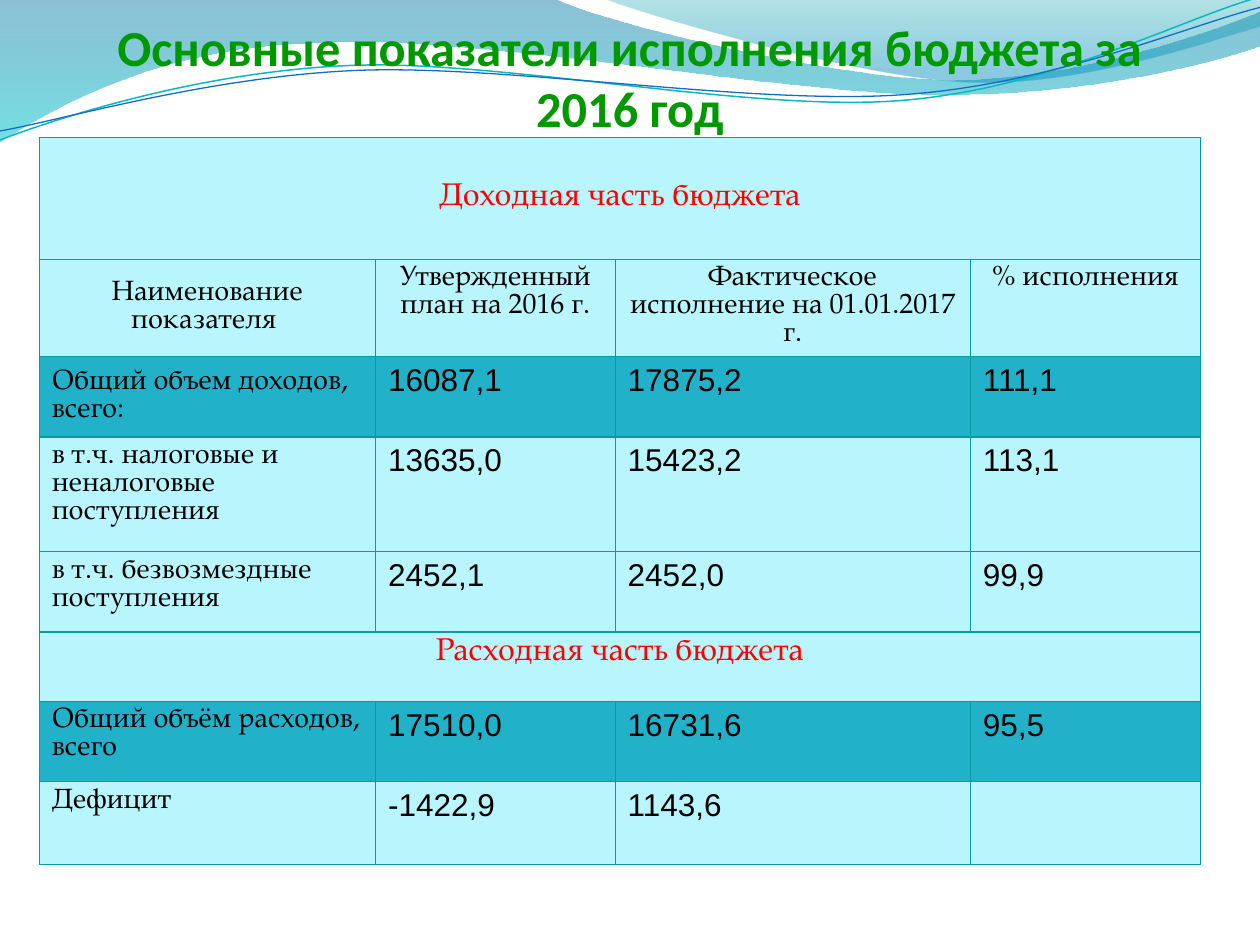
from dataclasses import dataclass
from math import cos, radians, sin

from lxml.etree import SubElement
from pptx import Presentation
from pptx.dml.color import RGBColor
from pptx.enum.text import MSO_ANCHOR as Anchor, PP_ALIGN as Align
from pptx.oxml.ns import qn
from pptx.util import Cm, Pt


@dataclass(frozen=True)
class Theme:
    """Hold the colours, fonts and type sizes of the slide."""

    title: str = "009900"
    heading: str = "FF0000"
    text: str = "000000"
    light: str = "B9F5FC"
    accent: str = "21B2C9"
    border: str = "069CA3"
    title_font: str = "Calibri"
    label_font: str = "TeX Gyre Pagella"
    number_font: str = "Arial"
    title_size: float = 28.8
    large: float = 18
    small: float = 16


THEME = Theme()
CURVE_TILT = 2.7
COLUMN_WIDTHS = (6.78, 4.83, 7.16, 4.64)
ROW_HEIGHTS = (2.46, 1.96, 1.62, 2.31, 1.62, 1.4, 1.62, 1.67)
ROWS = (
    ("Доходная часть бюджета",),
    ("Наименование показателя ", "Утвержденный план на 2016 г.",
     "Фактическое исполнение на 01.01.2017 г.", "% исполнения"),
    ("Общий объем доходов, всего:", "16087,1", "17875,2", "111,1"),
    ("в т.ч. налоговые и неналоговые поступления", "13635,0", "15423,2", "113,1"),
    ("в т.ч. безвозмездные поступления", "2452,1", "2452,0", "99,9"),
    ("Расходная часть бюджета",),
    ("Общий объём расходов, всего", "17510,0", "16731,6", "95,5"),
    ("Дефицит", "-1422,9", "1143,6", ""),
)
HEADER_ROW = 1
TOTAL_ROWS = (2, 6)
MIDDLE_CELLS = ((0, 0), (1, 0), (2, 0))

LEFT_WAVE = (
    (0, 0), (11.18, -0.03),
    (12.09, 0.43, 16.87, 1.6, 19.25, 1.6), (21.67, 1.6, 24.33, 0.66, 25.4, 0.23),
    (25.43, 0.91), (24.97, 1.12, 22.1, 1.93, 18.95, 1.91),
    (15.8, 1.91, 9.7, 0.71, 6.53, 0.86), (3.28, 0.91, 1.17, 2.11, -0.03, 2.87),
    (0, 0),
)
RIGHT_WAVE = (
    (12.17, -0.03), (12.93, 0.28, 17.32, 1.57, 19.53, 1.65),
    (21.74, 1.75, 24.41, 0.81, 25.4, 0.53), (25.4, 0), (12.17, -0.03),
)
TEAL_CURVE = (
    (0, 2.82), (1.22, 2.36, 4.01, 1.45, 7.04, 1.32),
    (10.03, 1.19, 15.06, 2.26, 18.11, 2.03), (21.16, 1.8, 23.83, 0.38, 25.35, -0.05),
)
BLUE_CURVE = (
    (0, 2.64), (1.19, 2.44, 4.17, 1.55, 7.19, 1.42),
    (10.24, 1.3, 15.16, 2.13, 18.21, 1.91), (21.23, 1.7, 23.9, 0.53, 25.4, 0.15),
)


def tilt(segments, center):
    """Turn all segment points clockwise about a center."""
    cosine, sine = cos(radians(CURVE_TILT)), sin(radians(CURVE_TILT))
    turned = []
    for segment in segments:
        values = []
        for x, y in zip(segment[::2], segment[1::2]):
            across, down = x - center[0], y - center[1]
            values += (center[0] + across * cosine - down * sine,
                       center[1] + across * sine + down * cosine)
        turned.append(tuple(values))
    return turned


def add_outline(slide, segments, close):
    """Add a shadowless freeform of straight and cubic segments."""
    points = [(Cm(x), Cm(y)) for segment in segments
              for x, y in zip(segment[::2], segment[1::2])]
    builder = slide.shapes.build_freeform(*points[0])
    builder.add_line_segments(points[1:], close=close)
    shape = builder.convert_to_shape()
    shape.shadow.inherit = False
    outline = next(shape.element.iter(qn("a:path")))
    lines = iter(outline.findall(qn("a:lnTo")))
    for segment in segments[1:]:
        line = next(lines)
        if len(segment) == 6:
            curve = SubElement(outline, qn("a:cubicBezTo"))
            outline.replace(line, curve)
            for vertex in (line, next(lines), next(lines)):
                curve.append(vertex[0])
                if vertex.getparent() is not None:
                    outline.remove(vertex)
    return shape


def add_wave(slide, segments, stops):
    """Add a wave filled with a translucent downward gradient."""
    shape = add_outline(slide, segments, True)
    shape.line.fill.background()
    shape.fill.gradient()
    shape.fill.gradient_angle = 270
    for stop, (position, color, opacity) in zip(shape.fill.gradient_stops, stops):
        stop.position = position
        stop.color.rgb = RGBColor.from_string(color)
    elements = shape.element.spPr.iter(qn("a:srgbClr"))
    for element, (position, color, opacity) in zip(elements, stops):
        SubElement(element, qn("a:alpha"), val=str(opacity * 1000))


def add_curve(slide, segments, center, color, width):
    """Add an open thin curve, rotated about its center."""
    shape = add_outline(slide, tilt(segments, center), False)
    shape.rotation = -CURVE_TILT
    shape.fill.background()
    shape.line.color.rgb = RGBColor.from_string(color)
    shape.line.width = Pt(width)


def format_text(paragraph, font_name, size, color, align, bold=False):
    """Format the runs and the alignment of a paragraph."""
    paragraph.alignment = align
    for run in paragraph.runs:
        run.font.name = font_name
        run.font.size = Pt(size)
        run.font.bold = bold
        run.font.color.rgb = RGBColor.from_string(color)


def add_title(slide, text):
    """Add the bottom-anchored slide title."""
    frame = slide.shapes.add_textbox(Cm(1.27), Cm(0.59), Cm(22.86), Cm(2.18)).text_frame
    frame.text = text
    frame.word_wrap = True
    frame.vertical_anchor = Anchor.BOTTOM
    frame.margin_left = frame.margin_right = frame.margin_bottom = 0
    frame.margin_top = Cm(0.13)
    format_text(frame.paragraphs[0], THEME.title_font, THEME.title_size,
                THEME.title, Align.CENTER, True)


def style_cell(cell, color):
    """Give a cell its borders and fill."""
    properties = cell._tc.get_or_add_tcPr()
    for side in ("a:lnL", "a:lnR", "a:lnT", "a:lnB"):
        line = SubElement(properties, qn(side), w=str(Pt(0.75)))
        fill = SubElement(line, qn("a:solidFill"))
        SubElement(fill, qn("a:srgbClr"), val=THEME.border)
    cell.fill.solid()
    cell.fill.fore_color.rgb = RGBColor.from_string(color)


def write_cell(cell, text, row, column):
    """Write a heading, label or number according to its place."""
    cell.text_frame.text = text
    paragraph = cell.text_frame.paragraphs[0]
    is_heading = len(ROWS[row]) == 1
    is_number = column > 0 and row != HEADER_ROW
    size = THEME.large if is_heading or is_number else THEME.small
    format_text(
        paragraph, THEME.number_font if is_number else THEME.label_font, size,
        THEME.heading if is_heading else THEME.text,
        Align.CENTER if is_heading or row == HEADER_ROW else Align.LEFT)
    if not is_number:
        paragraph.line_spacing = Pt(size)
    if (row, column) in MIDDLE_CELLS:
        cell.vertical_anchor = Anchor.MIDDLE


def add_budget_table(slide):
    """Add the table of budget indicators."""
    table = slide.shapes.add_table(
        len(ROWS), len(COLUMN_WIDTHS), Cm(0.79), Cm(2.77),
        Cm(sum(COLUMN_WIDTHS)), Cm(sum(ROW_HEIGHTS))).table
    for column, width in zip(table.columns, COLUMN_WIDTHS):
        column.width = Cm(width)
    for row, (texts, height) in enumerate(zip(ROWS, ROW_HEIGHTS)):
        table.rows[row].height = Cm(height)
        for cell in table.rows[row].cells:
            style_cell(cell, THEME.accent if row in TOTAL_ROWS else THEME.light)
        if len(texts) == 1:
            table.cell(row, 0).merge(table.cell(row, len(COLUMN_WIDTHS) - 1))
        for column, text in enumerate(texts):
            write_cell(table.cell(row, column), text, row, column)


def main():
    """Build and save the budget slide."""
    presentation = Presentation()
    presentation.slide_width, presentation.slide_height = Cm(25.4), Cm(19.05)
    slide = presentation.slides.add_slide(presentation.slide_layouts[6])
    add_wave(slide, LEFT_WAVE, ((0, "0074A1", 45), (1, "00C6CF", 55)))
    add_wave(slide, RIGHT_WAVE, ((0, "00A1A9", 30), (0.8, "008BBF", 45)))
    add_curve(slide, TEAL_CURVE, (12.67, 1.46), "0AB8BF", 0.85)
    add_curve(slide, BLUE_CURVE, (12.69, 1.5), "0F6FC6", 0.75)
    add_title(slide, "Основные показатели исполнения бюджета за 2016 год")
    add_budget_table(slide)
    presentation.save("out.pptx")


if __name__ == "__main__":
    main()
